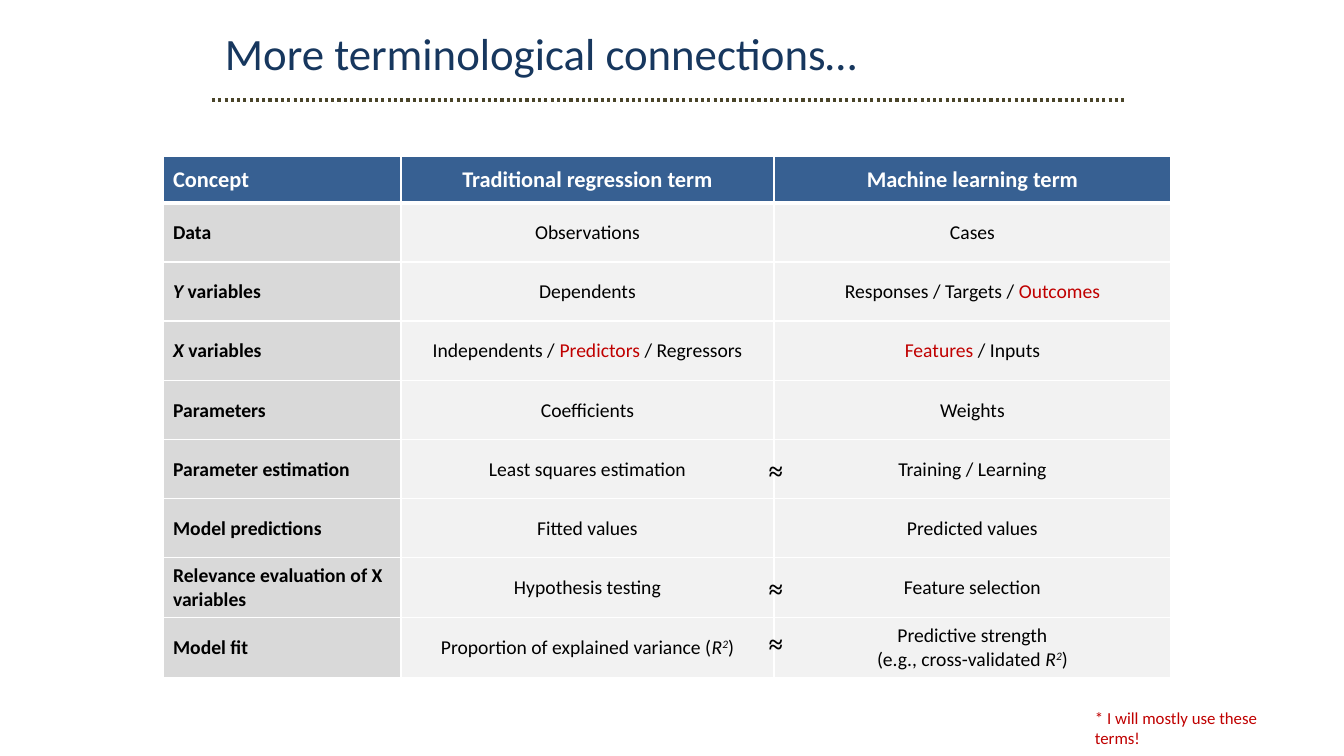
from lxml.etree import SubElement
from pptx import Presentation
from pptx.dml.color import RGBColor
from pptx.enum.dml import MSO_LINE
from pptx.enum.shapes import MSO_CONNECTOR
from pptx.enum.text import MSO_ANCHOR, MSO_AUTO_SIZE, PP_ALIGN
from pptx.oxml.ns import qn
from pptx.util import Emu, Pt

PX_PER_INCH = 100.8
NAVY = RGBColor(0x17, 0x37, 0x5E)
BLUE = RGBColor(0x37, 0x60, 0x92)
BROWN = RGBColor(0x4A, 0x45, 0x2A)
RED = RGBColor(0xC0, 0x00, 0x00)
GREY = RGBColor(0xD9, 0xD9, 0xD9)
PALE = RGBColor(0xF2, 0xF2, 0xF2)
WHITE = RGBColor(0xFF, 0xFF, 0xFF)
BLACK = RGBColor(0x00, 0x00, 0x00)

# A cell is a string or a list of (text, format) runs.
R_SQUARED = [("R", {"italic": True}), ("2", {"italic": True, "raised": True}), (")", {})]
HEADER = ["Concept", "Traditional regression term", "Machine learning term"]
TERMS = [
    ["Data", "Observations", "Cases"],
    [[("Y", {"italic": True}), (" variables", {})], "Dependents",
     [("Responses / Targets / ", {}), ("Outcomes", {"color": RED})]],
    [[("X", {"italic": True}), (" variables", {})],
     [("Independents / ", {}), ("Predictors", {"color": RED}), (" / Regressors", {})],
     [("Features", {"color": RED}), (" / Inputs", {})]],
    ["Parameters", "Coefficients", "Weights"],
    ["Parameter estimation", "Least squares estimation", "Training / Learning"],
    ["Model predictions", "Fitted values", "Predicted values"],
    ["Relevance evaluation of X variables", "Hypothesis testing", "Feature selection"],
    ["Model fit", [("Proportion of explained variance (", {})] + R_SQUARED,
     [("Predictive strength\n(e.g., cross-validated ", {})] + R_SQUARED],
]
COLUMN_WIDTHS = [238, 373, 397]
ROW_HEIGHTS = [47, 59, 59, 60, 59, 59, 59, 60, 60]
APPROX_TOPS = [450, 568, 623]


def px(length):
    return Emu(round(length * 914400 / PX_PER_INCH))


def write(frame, content, size, color, font="Calibri", bold=False, align=PP_ALIGN.LEFT):
    para = frame.paragraphs[0]
    para.alignment = align
    runs = [(content, {})] if isinstance(content, str) else content
    for text, style in runs:
        for index, line in enumerate(text.split("\n")):
            if index:
                para.add_line_break()
            run = para.add_run()
            run.text = line
            run.font.name = font
            run.font.size = Pt(size)
            run.font.bold = bold
            run.font.italic = style.get("italic", False)
            run.font.color.rgb = style.get("color", color)
            if style.get("raised"):
                run._r.get_or_add_rPr().set("baseline", "30000")


def add_text(page, box, content, size, color, wrap=True, **style):
    frame = page.shapes.add_textbox(*map(px, box)).text_frame
    frame.word_wrap = wrap
    frame.auto_size = MSO_AUTO_SIZE.SHAPE_TO_FIT_TEXT
    write(frame, content, size, color, **style)


def add_heading(page, box):
    left, top, width, height = box
    add_text(page, (left + 3, top, width - 27, height),
             "More terminological connections…", 32, NAVY)
    rule_y = px(top + 79)
    rule = page.shapes.add_connector(
        MSO_CONNECTOR.STRAIGHT, px(left), rule_y, px(left + width), rule_y)
    rule.line.color.rgb = BROWN
    rule.line.width = Pt(2.25)
    rule.line.dash_style = MSO_LINE.ROUND_DOT
    SubElement(rule._element.spPr, qn("a:effectLst"))


def set_borders(cell, **points):
    properties = cell._tc.get_or_add_tcPr()
    for side in "LRTB":
        edge = SubElement(properties, qn(f"a:ln{side}"), w=str(Pt(points.get(side, 1))))
        fill = SubElement(edge, qn("a:solidFill"))
        SubElement(fill, qn("a:srgbClr"), val=str(WHITE))


def add_terms_table(page, box):
    table = page.shapes.add_table(
        len(ROW_HEIGHTS), len(COLUMN_WIDTHS), *map(px, box)).table
    for column, width in zip(table.columns, COLUMN_WIDTHS):
        column.width = px(width)
    for row, height in zip(table.rows, ROW_HEIGHTS):
        row.height = px(height)
    for r, contents in enumerate([HEADER] + TERMS):
        for c, content in enumerate(contents):
            cell = table.cell(r, c)
            heading, concept = r == 0, c == 0
            set_borders(cell, B=3 if heading else 1, T=3 if r == 1 else 1)
            cell.fill.solid()
            cell.fill.fore_color.rgb = BLUE if heading else GREY if concept else PALE
            cell.vertical_anchor = MSO_ANCHOR.MIDDLE
            write(cell.text_frame, content, 16 if heading else 14,
                  WHITE if heading else BLACK, bold=heading or concept,
                  align=PP_ALIGN.LEFT if concept else PP_ALIGN.CENTER)


def add_approx_signs(page, left):
    for top in APPROX_TOPS:
        add_text(page, (left, top, 34, 40), "≈", 18, BLACK, wrap=False,
                 font="Times New Roman", bold=True)


def main():
    deck = Presentation()
    deck.slide_width, deck.slide_height = px(1344), px(756)
    page = deck.slides.add_slide(deck.slide_layouts[6])
    add_heading(page, (212, 21, 913, 65))
    add_terms_table(page, (163, 156, sum(COLUMN_WIDTHS), sum(ROW_HEIGHTS)))
    add_approx_signs(page, 759)
    add_text(page, (1085, 703, 231, 30), "* I will mostly use these terms!", 12, RED)
    deck.save("out.pptx")


if __name__ == "__main__":
    main()
